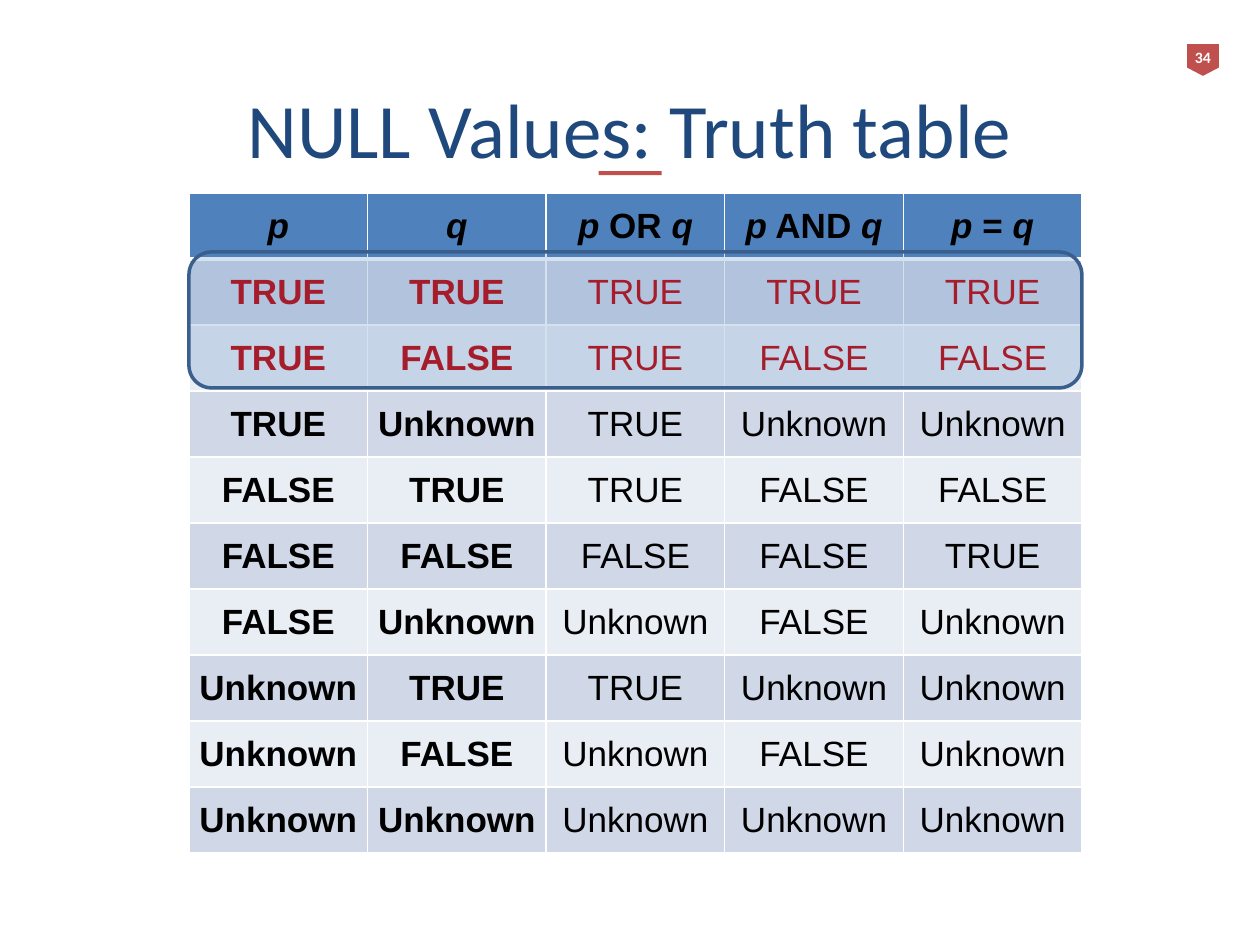
import itertools
from dataclasses import dataclass
from typing import Any

import pptx
import pptx.dml.color
import pptx.enum.shapes
import pptx.enum.text
import pptx.oxml
import pptx.oxml.ns
import pptx.util

Cm = pptx.util.Cm
Pt = pptx.util.Pt
RGBColor = pptx.dml.color.RGBColor
MSO_SHAPE = pptx.enum.shapes.MSO_SHAPE
PP_ALIGN = pptx.enum.text.PP_ALIGN
MSO_ANCHOR = pptx.enum.text.MSO_ANCHOR

WHITE = RGBColor(0xFF, 0xFF, 0xFF)
BLACK = RGBColor(0, 0, 0)
NAVY = RGBColor(0x1F, 0x49, 0x7D)
BLUE = RGBColor(0x4F, 0x81, 0xBD)
OUTLINE = RGBColor(0x3A, 0x5F, 0x8C)
RUST = RGBColor(0xC0, 0x50, 0x4D)
RED = RGBColor(0xC0, 0, 0)
BANDS = (RGBColor(0xD0, 0xD8, 0xE8), RGBColor(0xE9, 0xED, 0xF4))

VALUES = ("TRUE", "FALSE", "Unknown")
RANKS = ("FALSE", "Unknown", "TRUE")
HEADERS = (("p",), ("q",), ("p", " OR ", "q"), ("p", " AND ", "q"), ("p", " = ", "q"))
HIGHLIGHTED_ROWS = 2
COL_W = 3.6
ROW_H = 1.33


@dataclass(frozen=True)
class Box:
    left: float
    top: float
    width: float
    height: float

    def lengths(self) -> tuple:
        return Cm(self.left), Cm(self.top), Cm(self.width), Cm(self.height)


@dataclass(frozen=True)
class Style:
    font: str
    size: float
    color: RGBColor
    bold: bool = False


def write(p: Any, parts: tuple, style: Style) -> None:
    p.alignment = PP_ALIGN.CENTER
    p.font.name = style.font
    p.font.size = Pt(style.size)
    p.font.color.rgb = style.color
    p.font.bold = style.bold
    for part in parts:
        p.add_run().text = part


def add_text(shapes: Any, box: Box, text: str, style: Style, wrap: bool) -> None:
    tf = shapes.add_textbox(*box.lengths()).text_frame
    tf.word_wrap = wrap
    tf.vertical_anchor = MSO_ANCHOR.MIDDLE
    tf.margin_left = tf.margin_right = tf.margin_top = tf.margin_bottom = 0
    write(tf.paragraphs[0], (text,), style)


def add_block(shapes: Any, kind: Any, box: Box, color: RGBColor) -> Any:
    sp = shapes.add_shape(kind, *box.lengths())
    sp.shadow.inherit = False
    sp.fill.solid()
    sp.fill.fore_color.rgb = color
    sp.line.fill.background()
    return sp


def add_borders(cell: Any, bottom: float) -> None:
    tc_pr = cell._tc.get_or_add_tcPr()
    for side, width in (("L", 1), ("R", 1), ("T", 1), ("B", bottom)):
        tc_pr.append(pptx.oxml.parse_xml(
            f'<a:ln{side} {pptx.oxml.ns.nsdecls("a")} w="{Pt(width)}">'
            f'<a:solidFill><a:srgbClr val="{WHITE}"/></a:solidFill></a:ln{side}>'))


def fill_cell(cell: Any, parts: tuple, style: Style, color: RGBColor, bottom: float = 1) -> None:
    add_borders(cell, bottom)
    cell.fill.solid()
    cell.fill.fore_color.rgb = color
    cell.vertical_anchor = MSO_ANCHOR.MIDDLE
    cell.margin_left = cell.margin_right = cell.margin_top = Cm(0.03)
    cell.margin_bottom = 0
    write(cell.text_frame.paragraphs[0], parts, style)


def truth_row(p: str, q: str) -> tuple:
    disjunction = max(p, q, key=RANKS.index)
    conjunction = min(p, q, key=RANKS.index)
    equality = "Unknown" if "Unknown" in (p, q) else str(p == q).upper()
    return p, q, disjunction, conjunction, equality


def add_truth_table(shapes: Any, left: float, top: float) -> None:
    rows = [truth_row(p, q) for p, q in itertools.product(VALUES, repeat=2)]
    n_rows, n_cols = len(rows) + 1, len(HEADERS)
    box = Box(left, top, n_cols * COL_W, n_rows * ROW_H)
    table = shapes.add_table(n_rows, n_cols, *box.lengths()).table
    for col in table.columns:
        col.width = Cm(COL_W)
    for row in table.rows:
        row.height = Cm(ROW_H)
    for c, parts in enumerate(HEADERS):
        cell = table.cell(0, c)
        fill_cell(cell, parts, Style("Arial", 20, BLACK, True), BLUE, 3)
        for r in cell.text_frame.paragraphs[0].runs:
            r.font.italic = r.text in ("p", "q")
    for i, values in enumerate(rows):
        color = RED if i < HIGHLIGHTED_ROWS else BLACK
        for c, value in enumerate(values):
            style = Style("Arial", 20, color, c < 2)
            fill_cell(table.cell(i + 1, c), (value,), style, BANDS[i % 2])


def add_page_badge(shapes: Any, number: str) -> None:
    group = shapes.add_group_shape().shapes
    sp = add_block(group, MSO_SHAPE.PENTAGON, Box(23.93, 0.89, 0.64, 0.64), RUST)
    sp.adjustments[0] = 0.26
    sp.rotation = 90
    add_text(group, Box(23.83, 0.84, 0.84, 0.64), number, Style("Calibri", 9, WHITE, True), False)


def add_highlight(shapes: Any, box: Box) -> None:
    sp = add_block(shapes, MSO_SHAPE.ROUNDED_RECTANGLE, box, BLUE)
    sp.line.color.rgb = OUTLINE
    sp.line.width = Pt(2)
    color = sp._element.spPr.find(pptx.oxml.ns.qn("a:solidFill"))[0]
    color.append(pptx.oxml.parse_xml(f'<a:alpha {pptx.oxml.ns.nsdecls("a")} val="23000"/>'))


def main() -> None:
    prs = pptx.Presentation()
    prs.slide_width, prs.slide_height = Cm(25.4), Cm(19.05)
    s = prs.slides.add_slide(prs.slide_layouts[6])
    add_page_badge(s.shapes, "34")
    add_text(s.shapes, Box(1.27, 1.85, 22.86, 1.45), "NULL Values: Truth table",
             Style("Calibri", 44, NAVY), True)
    add_block(s.shapes, MSO_SHAPE.RECTANGLE, Box(12.07, 3.45, 1.27, 0.08), RUST)
    add_truth_table(s.shapes, 3.81, 3.89)
    add_highlight(s.shapes, Box(3.81, 5.08, len(HEADERS) * COL_W, 2.74))
    prs.save("out.pptx")


if __name__ == "__main__":
    main()
